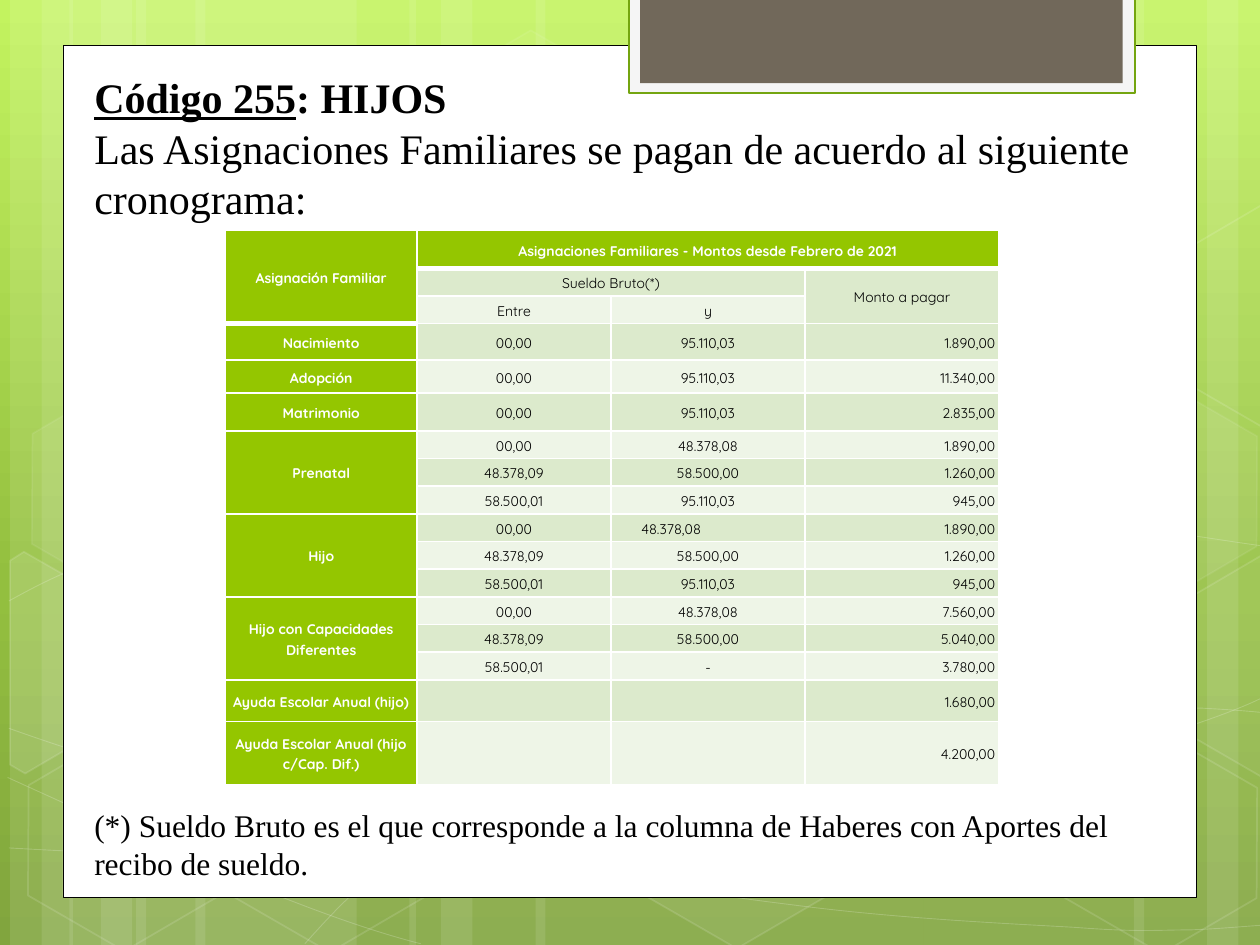
from copy import deepcopy

from lxml import etree
from pptx import Presentation
from pptx.dml.color import RGBColor
from pptx.enum.shapes import MSO_SHAPE
from pptx.enum.text import MSO_ANCHOR, PP_ALIGN
from pptx.oxml.ns import qn
from pptx.util import Inches, Pt

RECT, HEX = MSO_SHAPE.RECTANGLE, MSO_SHAPE.HEXAGON
MIDDLE = MSO_ANCHOR.MIDDLE
LEFT, CENTER, RIGHT = PP_ALIGN.LEFT, PP_ALIGN.CENTER, PP_ALIGN.RIGHT
COLORS = {
    "white": "FFFFFF", "black": "000000", "head": "94C600",
    "odd": "DCEACC", "even": "EEF5E7",
    "frame": "F5F5F5", "edge": "74A510", "brown": "71685A",
    "sky": "C3F35F", "leaf": "93BF3F", "moss": "81A53E",
}
RGB = {name: RGBColor.from_string(code) for name, code in COLORS.items()}

prs = Presentation()
prs.slide_width, prs.slide_height = Inches(10), Inches(7.5)
slide = prs.slides.add_slide(prs.slide_layouts[6])
shapes = slide.shapes


def paint(shape, fill=None, line=None, width=1, clear=(100, 100)):
    """Set fill and line; clear holds the opacity of each in percent."""
    shape.shadow.inherit = False
    if fill:
        shape.fill.solid()
        shape.fill.fore_color.rgb = RGB[fill]
    else:
        shape.fill.background()
    if line:
        shape.line.color.rgb = RGB[line]
        shape.line.width = Pt(width)
    else:
        shape.line.fill.background()
    for tag, part, alpha in (("a:solidFill", fill, clear[0]),
                             ("a:ln/a:solidFill", line, clear[1])):
        if part and alpha < 100:
            names = "/".join(qn(name) for name in tag.split("/"))
            color = shape.element.spPr.find(names)[0]
            etree.SubElement(color, qn("a:alpha")).set("val", str(alpha * 1000))


def outline(points, close):
    """Draw a freeform through points given in inches."""
    spots = [(Inches(x), Inches(y)) for x, y in points]
    path = shapes.build_freeform(*spots[0], scale=1.0)
    path.add_line_segments(spots[1:], close=close)
    return path.convert_to_shape()


# Background gradient
back = slide.background.fill
back.gradient()
back.gradient_angle = 270
stops = slide.element.find(".//" + qn("a:gsLst"))
stops.insert(1, deepcopy(stops[0]))
for stop, name, spot in zip(back.gradient_stops, ("sky", "leaf", "moss"), (0, 0.62, 1)):
    stop.color.rgb = RGB[name]
    stop.position = spot

# Light vertical stripes
for x, w in [(1.08, 1.75), (0.08, 0.5), (0.33, 0.83), (1.55, 1.75), (0.55, 0.5),
             (0.8, 0.83), (7.33, 1.75), (9.58, 0.5), (9, 0.83), (4.25, 3.08),
             (3.25, 0.5), (3.5, 0.83)]:
    stripe = shapes.add_shape(RECT, Inches(x), 0, Inches(w), Inches(7.5))
    paint(stripe, "white", clear=(10, 100))

# Thin curves: a start, then two handles and an end for each Bezier piece
curves = [
    [(0.07, 6.73), (0.61, 6.76), (1.15, 6.79), (1.9, 6.78), (2.65, 6.77), (3.58, 6.75),
     (4.58, 6.65), (5.58, 6.55), (7, 6.36), (7.92, 6.17), (8.83, 5.98), (9.77, 5.68),
     (10.07, 5.51)],
    [(0.07, 4.77), (0.36, 4.61), (0.65, 4.46), (1.21, 4.31), (1.78, 4.16), (2.59, 3.94),
     (3.47, 3.87), (4.36, 3.8), (5.44, 3.79), (6.54, 3.87), (7.64, 3.95), (9.47, 4.26),
     (10.07, 4.34)],
    [(0.06, 6.17), (1.27, 6.72), (2.47, 7.27), (3.34, 7.49)],
    [(0.07, 5.78), (0.38, 5.89), (0.7, 6), (1.28, 6.16), (1.86, 6.31), (2.73, 6.56),
     (3.57, 6.73), (4.4, 6.9), (5.45, 7.08), (6.28, 7.18), (7.11, 7.29), (8, 7.33),
     (8.53, 7.36), (9.05, 7.4), (9.19, 7.38), (9.45, 7.38), (9.71, 7.37), (9.89, 7.35),
     (10.07, 7.34)],
    [(2.42, 7.49), (2.6, 7.29), (2.78, 7.09), (3.02, 6.91), (3.26, 6.73), (3.6, 6.53),
     (3.88, 6.39), (4.16, 6.25), (4.33, 6.19), (4.7, 6.09), (5.06, 5.99), (5.73, 5.85),
     (6.08, 5.78), (6.44, 5.71), (6.49, 5.71), (6.8, 5.69), (7.11, 5.66), (7.6, 5.63),
     (7.94, 5.62), (8.29, 5.61), (8.86, 5.62), (8.86, 5.62), (9.1, 5.62), (9.3, 5.62),
     (9.53, 5.62), (9.71, 5.63), (9.88, 5.64), (10.06, 5.66)],
]
for curve in curves:
    wave = outline(curve, False)
    lines = wave.element.findall(".//" + qn("a:lnTo"))
    for i in range(0, len(lines), 3):
        bend = etree.Element(qn("a:cubicBezTo"))
        lines[i].addprevious(bend)
        for line in lines[i:i + 3]:
            bend.append(line[0])
            line.getparent().remove(line)
    paint(wave, None, "white", 0.5, (100, 20))

# Hexagons: left, top, fill opacity, line opacity
for x, y, fill, line in [(3.34, 0.36, 4, 8), (4.97, 5.89, 6, 12), (0.11, 5.91, 0, 12),
                         (0.14, 3.12, 7, 8), (1.74, 5.92, 0, 12), (7.53, 4.53, 10, 12),
                         (8.34, 5.93, 0, 12), (8.34, 3.14, 7, 8)]:
    cell = shapes.add_shape(HEX, Inches(x), Inches(y), Inches(1.75), Inches(1.52))
    cell.adjustments[0] = 0.285
    cell.rotation = 30
    paint(cell, "white" if fill else None, "white", 1, (fill, line))

# Hexagons cut by the slide edges
right = [(9.26, 2.07), (10.01, 1.63), (10.1, 1.68), (10.09, 3.35), (10.02, 3.39), (9.26, 2.95)]
left = [(0.08, 4.45), (0.19, 4.38), (0.96, 4.82), (0.95, 5.7), (0.2, 6.14), (0.08, 6.07)]
for points, fill in [(left, 10), ([(x, y + 2.78) for x, y in right], 4), (right, 0)]:
    paint(outline(points, True), "white" if fill else None, "white", 1, (fill, 12))

# White page and top tab
for box, fill, line, width in [((0.5, 0.36, 9, 6.76), "white", "black", 0.5),
                               ((4.99, -0.02, 4.02, 0.76), "frame", "edge", 1.25),
                               ((5.08, -0.02, 3.83, 0.68), "brown", None, 0)]:
    paint(shapes.add_shape(RECT, *map(Inches, box)), fill, line, width)

# Title and footnote: each paragraph is a list of (text, underline) runs
title = [[("Código 255", True), (": HIJOS", False)],
         [("Las Asignaciones Familiares se pagan de acuerdo al siguiente cronograma:", False)]]
note = [[("(*) Sueldo Bruto es el que corresponde a la columna de Haberes con Aportes "
          "del recibo de sueldo.", False)]]
for y, h, size, lines in [(0.52, 1.31, 24, title), (6.35, 1.01, 18, note)]:
    frame = shapes.add_textbox(Inches(0.65), Inches(y), Inches(8.43), Inches(h)).text_frame
    frame.word_wrap = True
    for i, runs in enumerate(lines):
        para = frame.add_paragraph() if i else frame.paragraphs[0]
        para.font.name, para.font.size = "Times New Roman", Pt(size)
        para.font.color.rgb = RGB["black"]
        para.font.bold = len(runs) > 1
        for text, under in runs:
            run = para.add_run()
            run.text = text
            if under:
                run.font.underline = True

# Table of amounts
low, mid, top = "48.378,08", "58.500,00", "95.110,03"
starts = ("00,00", "48.378,09", "58.500,01")
rows = [
    ("Asignación Familiar", "Asignaciones Familiares - Montos desde Febrero de 2021", "", ""),
    ("", "Sueldo Bruto(*)", "", "Monto a pagar"),
    ("", "Entre", "y", ""),
]
for name, pay in [("Nacimiento", "1.890,00"), ("Adopción", "11.340,00"),
                  ("Matrimonio", "2.835,00")]:
    rows.append((name, starts[0], top, pay))
for name, last, pays in [("Prenatal", top, ("1.890,00", "1.260,00", "945,00")),
                         ("Hijo", top, ("1.890,00", "1.260,00", "945,00")),
                         ("Hijo con Capacidades\nDiferentes", "-",
                          ("7.560,00", "5.040,00", "3.780,00"))]:
    rows += zip((name, "", ""), starts, (low, mid, last), pays)
rows += [("Ayuda Escolar Anual (hijo)", "", "", "1.680,00"),
         ("Ayuda Escolar Anual (hijo c/Cap. Dif.)", "", "", "4.200,00")]
heights = [0.3, 0.22, 0.22, 0.29, 0.26, 0.3] + [0.22] * 9 + [0.33, 0.5]

table = shapes.add_table(len(rows), 4, Inches(1.79), Inches(1.83),
                         Inches(6.14), Inches(4.43)).table
for col, width in zip(table.columns, (1.52, 1.54, 1.54, 1.54)):
    col.width = Inches(width)
for r, texts in enumerate(rows):
    table.rows[r].height = Inches(heights[r])
    for c, text in enumerate(texts):
        cell = table.cell(r, c)
        head = r == 0 or c == 0
        cell.text = text
        cell.vertical_anchor = MIDDLE
        cell.margin_left = cell.margin_right = Inches(0.03)
        cell.margin_top = cell.margin_bottom = 0
        cell.fill.solid()
        cell.fill.fore_color.rgb = RGB["head" if head else "odd" if r % 2 else "even"]
        for para in cell.text_frame.paragraphs:
            para.alignment = RIGHT if c == 3 and r > 2 else CENTER
            para.line_spacing = 1.15
            para.font.name, para.font.size, para.font.bold = "Quicksand", Pt(8), head
            para.font.color.rgb = RGB["white" if head else "black"]
        props = cell._tc.get_or_add_tcPr()
        for i, side in enumerate(("lnL", "lnR", "lnT", "lnB")):
            thick = side == "lnB" and (r == 0 or (r, c) == (2, 0))
            edge = etree.Element(qn("a:" + side), w=str(Pt(3 if thick else 1)))
            solid = etree.SubElement(edge, qn("a:solidFill"))
            etree.SubElement(solid, qn("a:srgbClr")).set("val", COLORS["white"])
            props.insert(i, edge)

shifted = table.cell(9, 2)
shifted.margin_left = Inches(0.24)
shifted.text_frame.paragraphs[0].alignment = LEFT

for r, c, end, far in [(0, 0, 2, 0), (0, 1, 0, 3), (1, 1, 1, 2), (1, 3, 2, 3),
                       (6, 0, 8, 0), (9, 0, 11, 0), (12, 0, 14, 0)]:
    table.cell(r, c).merge(table.cell(end, far))

prs.save("out.pptx")
